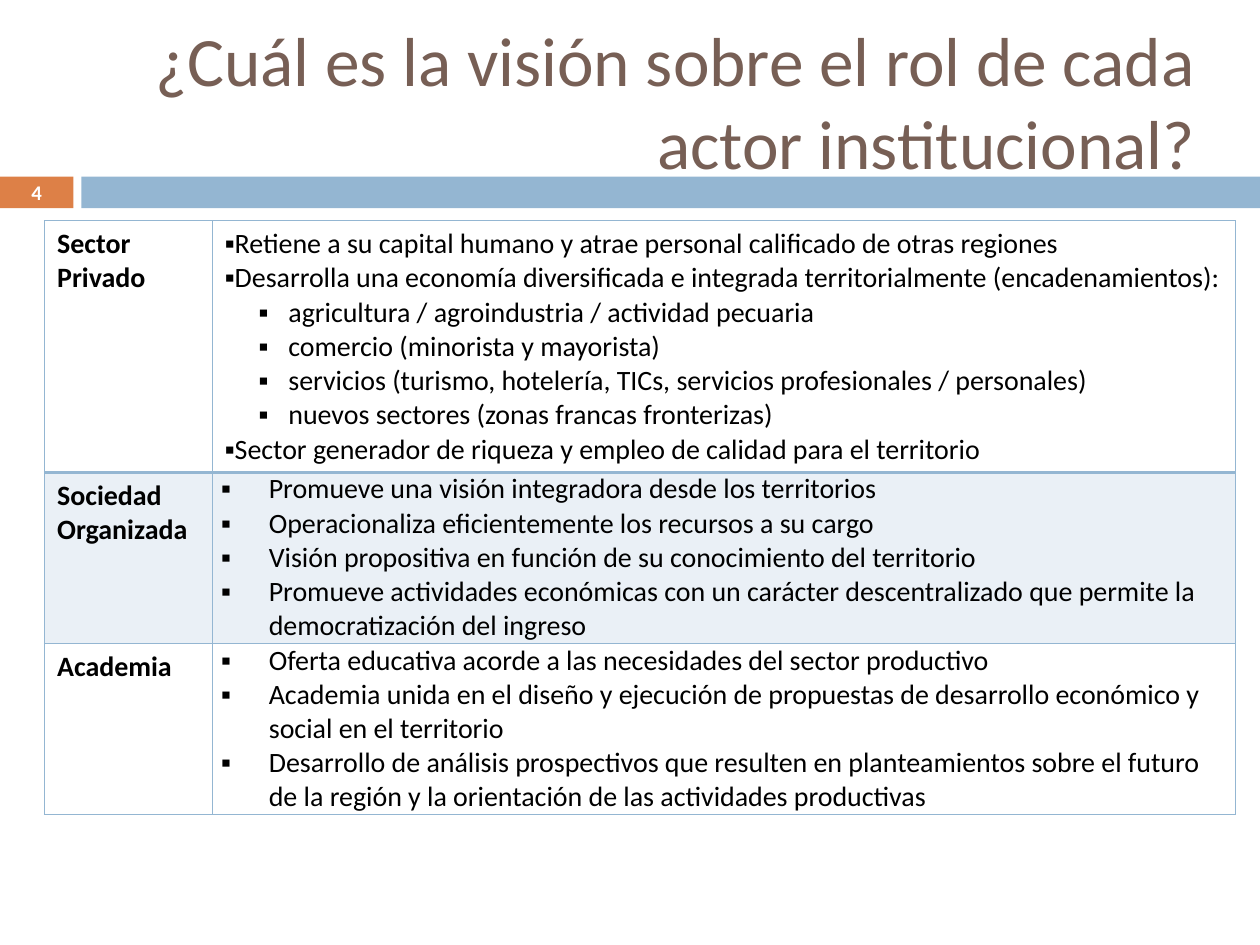
from dataclasses import dataclass

from lxml.etree import SubElement
from pptx import Presentation
from pptx.dml.color import RGBColor as Rgb
from pptx.enum.shapes import MSO_SHAPE as Preset
from pptx.enum.text import MSO_ANCHOR as Anchor, PP_ALIGN as Align
from pptx.oxml import parse_xml
from pptx.oxml.ns import nsdecls, qn
from pptx.util import Cm, Pt


@dataclass(frozen=True)
class Theme:
    font: str = "Calibri"
    title: str = "775F55"
    accent: str = "DD8047"
    band: str = "94B6D2"
    tint: str = "EAF0F6"
    ink: str = "000000"
    paper: str = "FFFFFF"
    title_size: float = 39.6
    body_size: float = 16
    number_size: float = 11.9


@dataclass(frozen=True)
class Box:
    left: float
    top: float
    width: float
    height: float

    def lengths(self) -> tuple:
        return Cm(self.left), Cm(self.top), Cm(self.width), Cm(self.height)


@dataclass(frozen=True)
class Bullet:
    indent: float
    hanging: float
    level: int = 0


@dataclass(frozen=True)
class Actor:
    name: str
    roles: tuple
    height: float
    tinted: bool = False
    tight: bool = True
    rule: float = 1


THEME = Theme()
FLUSH = Bullet(0, 0)
NESTED = Bullet(1.28, 0.6, 1)
HANGING = Bullet(0.96, 0.96)

ACTORS = (
    Actor("Sector Privado", (
        (FLUSH, "Retiene a su capital humano y atrae personal calificado de otras regiones"),
        (FLUSH, "Desarrolla una economía diversificada e integrada territorialmente (encadenamientos):"),
        (NESTED, "agricultura / agroindustria / actividad pecuaria"),
        (NESTED, "comercio (minorista y mayorista)"),
        (NESTED, "servicios (turismo, hotelería, TICs, servicios profesionales / personales)"),
        (NESTED, "nuevos sectores (zonas francas fronterizas)"),
        (FLUSH, "Sector generador de riqueza y empleo de calidad para el territorio"),
    ), 5.07, tight=False, rule=2),
    Actor("Sociedad Organizada", (
        (HANGING, "Promueve una visión integradora desde los territorios"),
        (HANGING, "Operacionaliza eficientemente los recursos a su cargo"),
        (HANGING, "Visión propositiva en función de su conocimiento del territorio"),
        (HANGING, "Promueve actividades económicas con un carácter descentralizado "
                  "que permite la democratización del ingreso"),
    ), 3.45, tinted=True),
    Actor("Academia", (
        (HANGING, "Oferta educativa acorde a las necesidades del sector productivo"),
        (HANGING, "Academia unida en el diseño y ejecución de propuestas de desarrollo "
                  "económico y social en el territorio"),
        (HANGING, "Desarrollo de análisis prospectivos que resulten en planteamientos sobre "
                  "el futuro de la región y la orientación de las actividades productivas"),
    ), 3.45),
)


def style(paragraph, size: float, color: str, bold: bool = False) -> None:
    for run in paragraph.runs:
        run.font.name = THEME.font
        run.font.size = Pt(size)
        run.font.bold = bold
        run.font.color.rgb = Rgb.from_string(color)


def add_bar(slide, box: Box, color: str) -> None:
    bar = slide.shapes.add_shape(Preset.RECTANGLE, *box.lengths())
    bar.shadow.inherit = False
    bar.fill.solid()
    bar.fill.fore_color.rgb = Rgb.from_string(color)
    bar.line.fill.background()


def add_label(slide, box: Box, text: str, align: Align, size: float, color: str,
              bold: bool = False) -> None:
    frame = slide.shapes.add_textbox(*box.lengths()).text_frame
    frame.word_wrap = True
    frame.vertical_anchor = Anchor.MIDDLE
    frame.text = text
    frame.paragraphs[0].alignment = align
    style(frame.paragraphs[0], size, color, bold)


def set_bullet(paragraph, bullet: Bullet) -> None:
    paragraph.level = bullet.level
    properties = paragraph._p.get_or_add_pPr()
    properties.set("marL", str(Cm(bullet.indent)))
    properties.set("indent", str(-Cm(bullet.hanging)))
    SubElement(properties, qn("a:buFont")).set("typeface", THEME.font)
    SubElement(properties, qn("a:buChar")).set("char", "▪")


def dress_cell(cell, tinted: bool, top: float, bottom: float) -> None:
    if tinted:
        cell.fill.solid()
        cell.fill.fore_color.rgb = Rgb.from_string(THEME.tint)
    else:
        cell.fill.background()
    properties = cell._tc.get_or_add_tcPr()
    for place, (side, width) in enumerate((("L", 1), ("R", 1), ("T", top), ("B", bottom))):
        properties.insert(place, parse_xml(
            f'<a:ln{side} {nsdecls("a")} w="{Pt(width)}"><a:solidFill>'
            f'<a:srgbClr val="{THEME.band}"/></a:solidFill></a:ln{side}>'))


def write_roles(cell, actor: Actor) -> None:
    if actor.tight:
        cell.margin_left = cell.margin_right = Cm(0.18)
        cell.margin_top = cell.margin_bottom = 0
    cell.text_frame.text = "\n".join(text for _, text in actor.roles)
    for paragraph, (bullet, _) in zip(cell.text_frame.paragraphs, actor.roles):
        set_bullet(paragraph, bullet)
        style(paragraph, THEME.body_size, THEME.ink)


def add_actors(slide, left: float, top: float, widths: tuple) -> None:
    box = Box(left, top, sum(widths), sum(actor.height for actor in ACTORS))
    table = slide.shapes.add_table(len(ACTORS), len(widths), *box.lengths()).table
    table.first_row = table.horz_banding = False
    for column, width in zip(table.columns, widths):
        column.width = Cm(width)
    rule_above = 1
    for row, actor in zip(table.rows, ACTORS):
        row.height = Cm(actor.height)
        name, roles = row.cells
        name.text_frame.text = actor.name
        style(name.text_frame.paragraphs[0], THEME.body_size, THEME.ink, True)
        write_roles(roles, actor)
        for cell in row.cells:
            dress_cell(cell, actor.tinted, rule_above, actor.rule)
        rule_above = actor.rule


def main() -> None:
    deck = Presentation()
    deck.slide_width, deck.slide_height = Cm(25.4), Cm(19.05)
    slide = deck.slides.add_slide(deck.slide_layouts[6])
    number = Box(0, 3.56, 1.48, 0.64)
    add_bar(slide, number, THEME.accent)
    add_bar(slide, Box(1.64, 3.56, 23.76, 0.64), THEME.band)
    add_label(slide, Box(1.69, 0.65, 22.65, 2.74),
              "¿Cuál es la visión sobre el rol de cada actor institucional?",
              Align.RIGHT, THEME.title_size, THEME.title)
    add_actors(slide, 0.9, 4.45, (3.38, 20.63))
    add_label(slide, number, "4", Align.CENTER, THEME.number_size, THEME.paper, True)
    deck.save("out.pptx")


if __name__ == "__main__":
    main()
